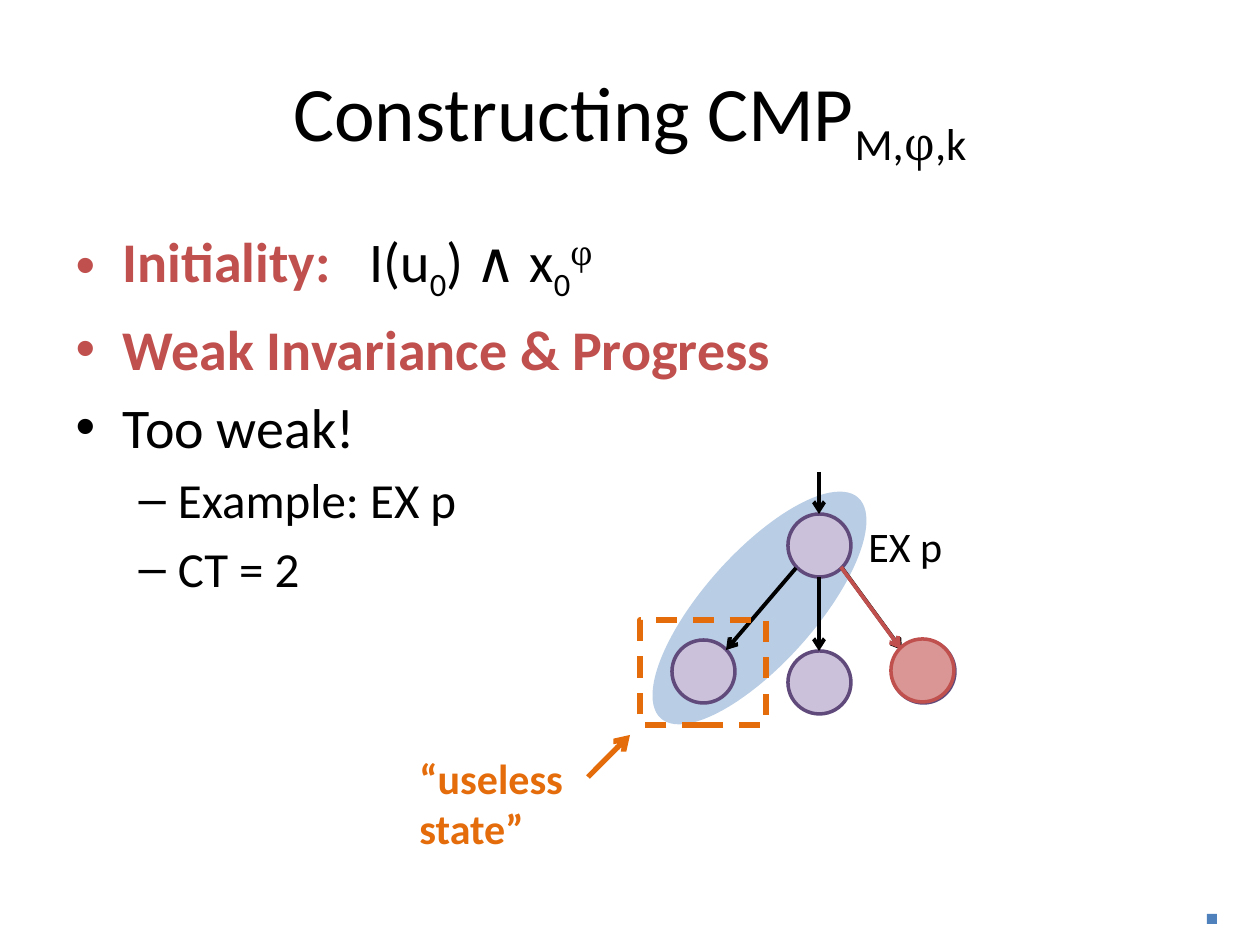
from dataclasses import dataclass, field
from typing import Any

from lxml.etree import SubElement
from pptx import Presentation
from pptx.dml.color import RGBColor
from pptx.enum.dml import MSO_LINE_DASH_STYLE as Dash
from pptx.enum.shapes import MSO_CONNECTOR as Link, MSO_SHAPE as Preset
from pptx.enum.text import MSO_ANCHOR as Anchor, MSO_AUTO_SIZE as Fit, PP_ALIGN as Align
from pptx.oxml.ns import qn
from pptx.util import Emu, Pt

BLACK = RGBColor(0x00, 0x00, 0x00)
RED = RGBColor(0xC0, 0x50, 0x4D)
PINK = RGBColor(0xD9, 0x96, 0x94)
ORANGE = RGBColor(0xE4, 0x6C, 0x0A)
PURPLE = RGBColor(0x60, 0x4A, 0x7B)
LILAC = RGBColor(0xCC, 0xC1, 0xDA)
PALE_BLUE = RGBColor(0xB9, 0xCD, 0xE5)
BLUE = RGBColor(0x4F, 0x81, 0xBD)

PX_PER_INCH = 126
STATE_SIZE = 63
SUB, SUPER = -25000, 30000


@dataclass(frozen=True)
class Span:
    text: str
    color: RGBColor = BLACK
    bold: bool = False
    font: str = "Calibri"
    attrs: dict[str, int] = field(default_factory=dict)


@dataclass(frozen=True)
class Line:
    spans: list[Span]
    size: int
    level: int = 0


@dataclass(frozen=True)
class Figure:
    preset: Preset
    area: tuple[int, int, int, int]
    fill: RGBColor | None = None
    line: RGBColor | None = None
    width: float = 2
    dash: Dash | None = None
    rotation: float = 0


@dataclass(frozen=True)
class Arrow:
    start: tuple[int, int]
    end: tuple[int, int]
    color: RGBColor = BLACK
    width: float = 2.25


def px(*values: int) -> list[Emu]:
    """Turn pixel lengths into EMU."""
    return [Emu(round(value * 914400 / PX_PER_INCH)) for value in values]


def assign(target: Any, formats: dict[str, Any]) -> None:
    """Set each named format value on the target."""
    for name, value in formats.items():
        setattr(target, name, value)


def place(box: Any, area: tuple[int, int, int, int]) -> None:
    """Move and size a box."""
    assign(box, dict(zip(("left", "top", "width", "height"), px(*area))))


def write(box: Any, lines: list[Line], align: Align = Align.LEFT) -> None:
    """Fill a box with formatted paragraphs."""
    frame = box.text_frame
    for index, line in enumerate(lines):
        para = frame.add_paragraph() if index else frame.paragraphs[0]
        assign(para, {"level": line.level, "alignment": align})
        for item in line.spans:
            span = para.add_run()
            span.text = item.text
            assign(span.font, {"size": Pt(line.size), "bold": item.bold, "name": item.font})
            span.font.color.rgb = item.color
            for name, value in item.attrs.items():
                span._r.get_or_add_rPr().set(name, str(value))


def draw_figure(shapes: Any, figure: Figure) -> None:
    """Draw a preset shape."""
    shape = shapes.add_shape(figure.preset, *px(*figure.area))
    shape.shadow.inherit = False
    shape.rotation = figure.rotation
    for paint, color in ((shape.fill, figure.fill), (shape.line.fill, figure.line)):
        if color is None:
            paint.background()
        else:
            paint.solid()
            paint.fore_color.rgb = color
    if figure.line is not None:
        assign(shape.line, {"width": Pt(figure.width), "dash_style": figure.dash})


def draw_state(shapes: Any, left: int, top: int, fill: RGBColor = LILAC, line: RGBColor = PURPLE) -> None:
    """Draw one round state."""
    draw_figure(shapes, Figure(Preset.OVAL, (left, top, STATE_SIZE, STATE_SIZE), fill, line))


def draw_arrow(shapes: Any, arrow: Arrow) -> None:
    """Draw a straight line with an open arrowhead at its end."""
    link = shapes.add_connector(Link.STRAIGHT, *px(*arrow.start, *arrow.end))
    link.line.width = Pt(arrow.width)
    link.line.color.rgb = arrow.color
    SubElement(link.line._get_or_add_ln(), qn("a:tailEnd"), type="arrow")
    SubElement(link._element.spPr, qn("a:effectLst"))


def draw_label(shapes: Any, area: tuple[int, int, int, int], lines: list[Line]) -> None:
    """Add an unwrapped text box that fits its text."""
    box = shapes.add_textbox(*px(*area))
    assign(box.text_frame, {"word_wrap": False, "auto_size": Fit.SHAPE_TO_FIT_TEXT})
    write(box, lines)


TITLE = [Line([
    Span("Constructing CMP"),
    Span("M,", attrs={"baseline": SUB}),
    Span("φ", font="Cambria", attrs={"baseline": SUB}),
    Span(",k", attrs={"baseline": SUB}),
], 44)]

BODY = [
    Line([
        Span("Initiality:", RED, True),
        Span(" ", RED, True, attrs={"spc": 1450}),
        Span("I(u"),
        Span("0", attrs={"baseline": SUB}),
        Span(") ∧ x"),
        Span("0", attrs={"baseline": SUB}),
        Span("φ", font="Cambria", attrs={"baseline": SUPER}),
    ], 32),
    Line([Span("Weak Invariance & Progress", RED, True)], 32),
    Line([Span("Too weak!")], 32),
    Line([Span("Example: EX p")], 28, 1),
    Line([Span("CT = 2")], 28, 1),
]

STATES = [(788, 514), (672, 640), (788, 651), (892, 640)]
TRANSITIONS = [
    Arrow((796, 568), (726, 650)),
    Arrow((819, 577), (819, 651)),
    Arrow((842, 568), (902, 650)),
]


def main() -> None:
    """Build the slide and save it."""
    deck = Presentation()
    assign(deck, dict(zip(("slide_width", "slide_height"), px(1260, 945))))
    page = deck.slides.add_slide(deck.slide_layouts[1])
    shapes = page.shapes
    title, body = page.placeholders
    place(title, (63, 38, 1134, 158))
    title.text_frame.vertical_anchor = Anchor.MIDDLE
    write(title, TITLE, Align.CENTER)
    place(body, (63, 220, 1134, 624))
    write(body, BODY)

    draw_figure(shapes, Figure(Preset.OVAL, (704, 460, 111, 296), PALE_BLUE, rotation=41.8))
    tree = shapes.add_group_shape().shapes
    for left, top in STATES:
        draw_state(tree, left, top)
    for arrow in TRANSITIONS:
        draw_arrow(tree, arrow)
    draw_arrow(shapes, Arrow((819, 472), (819, 514)))
    draw_label(shapes, (856, 514, 100, 63), [Line([Span("EX p")], 24)])

    branch = shapes.add_group_shape().shapes
    draw_state(branch, 891, 639, PINK, RED)
    draw_arrow(branch, Arrow((841, 567), (901, 649), RED))

    draw_figure(shapes, Figure(Preset.RECTANGLE, (1207, 914, 10, 10), BLUE))
    draw_figure(shapes, Figure(Preset.RECTANGLE, (640, 620, 126, 105), None, ORANGE, 3, Dash.DASH))
    draw_label(shapes, (407, 746, 171, 115),
               [Line([Span(text, ORANGE, True)], 24) for text in ("“useless", "state”")])
    draw_arrow(shapes, Arrow((588, 777), (630, 735), ORANGE, 3))
    deck.save("out.pptx")


if __name__ == "__main__":
    main()
